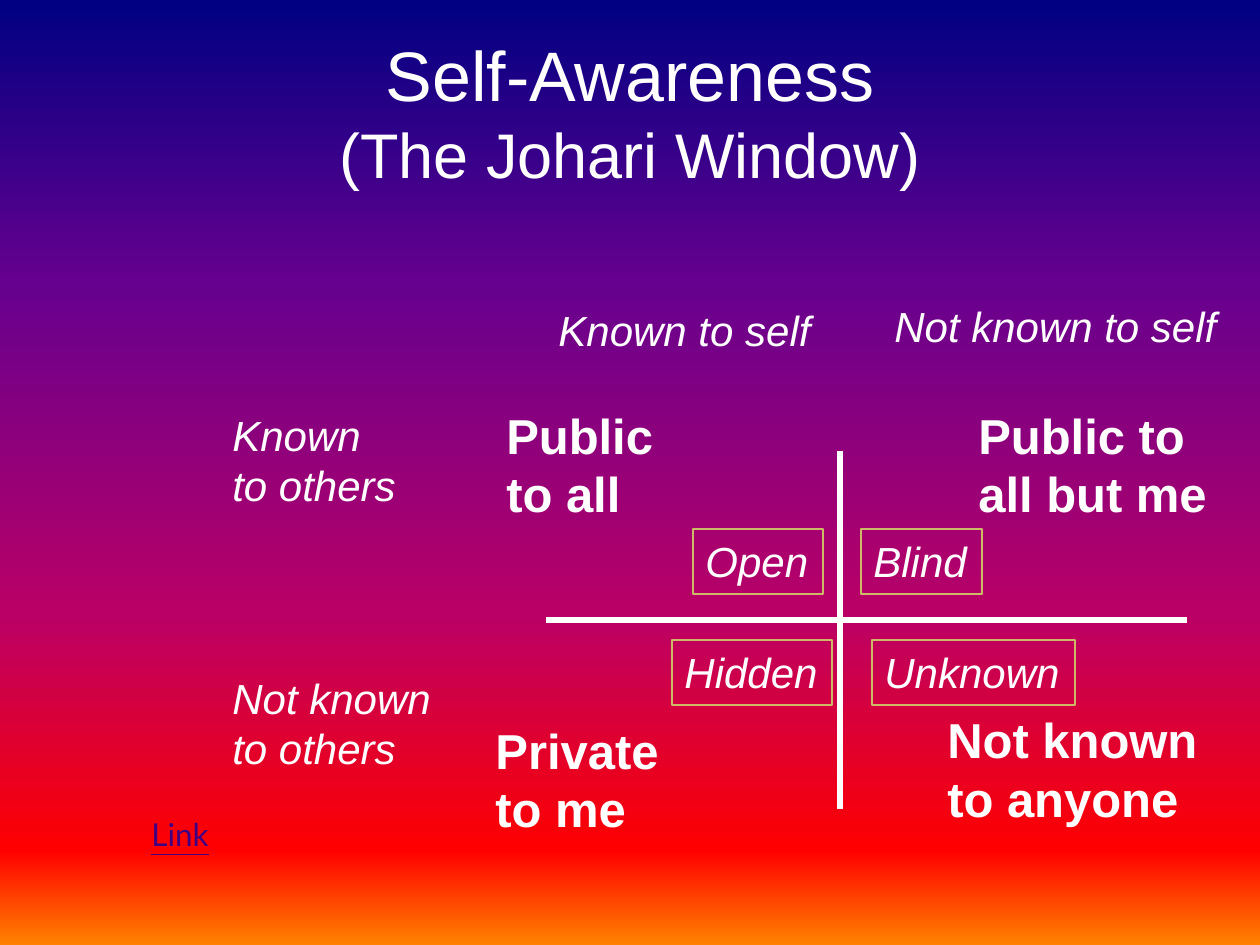
"""Build the Johari Window slide on self-awareness."""
from lxml.etree import SubElement
from pptx import Presentation
from pptx.dml.color import RGBColor
from pptx.enum.shapes import MSO_CONNECTOR as CONNECTOR, MSO_SHAPE as SHAPE
from pptx.enum.text import MSO_ANCHOR as ANCHOR, MSO_AUTO_SIZE as FIT, PP_ALIGN as ALIGN
from pptx.oxml.ns import qn
from pptx.util import Pt

WHITE = RGBColor(0xFF, 0xFF, 0xFF)
GOLD = RGBColor(0xCE, 0xB9, 0x66)
INDIGO = RGBColor(0x41, 0x00, 0x82)
SUNSET = [
    (0, RGBColor(0x00, 0x00, 0x82)),
    (30, RGBColor(0x66, 0x00, 0x8F)),
    (65, RGBColor(0xBA, 0x00, 0x66)),
    (90, RGBColor(0xFF, 0x00, 0x00)),
    (100, RGBColor(0xFF, 0x82, 0x00)),
]
SCALE = 914400 / 126


def px(*lengths):
    return [round(length * SCALE) for length in lengths]


def write(para, text, size, color=WHITE, name="Arial", bold=False, italic=False):
    span = para.add_run()
    span.text = text
    font = span.font
    font.size, font.name = Pt(size), name
    font.bold, font.italic = bold, italic
    font.color.rgb = color
    return span


deck = Presentation()
deck.slide_width, deck.slide_height = px(1260, 945)
page = deck.slides.add_slide(deck.slide_layouts[6])

backdrop = page.background.fill
backdrop.gradient()
backdrop.gradient_angle = 270
stops = page._element.xpath(".//a:gsLst")[0]
for stop in list(stops):
    stops.remove(stop)
for percent, color in SUNSET:
    stop = SubElement(stops, qn("a:gs"), pos=str(percent * 1000))
    SubElement(stop, qn("a:srgbClr"), val=str(color))

title = page.shapes.add_textbox(*px(84, 31, 1092, 160)).text_frame
title.word_wrap = True
title.vertical_anchor = ANCHOR.MIDDLE
para = title.paragraphs[0]
para.alignment = ALIGN.CENTER
write(para, "Self-Awareness", 40)
para.add_line_break()
write(para, "(The Johari Window)", 36)

AXIS_LABELS = [
    ("Known to self", 546, 298, 286, 63),
    ("Not known to self", 882, 294, 378, 63),
    ("Known to others", 220, 403, 189, 115),
    ("Not known to others", 220, 666, 262, 115),
]
MEANINGS = [
    ("Not known to anyone", 935, 703, 325, 130),
    ("Public to all", 494, 399, 199, 130),
    ("Public to all but me", 966, 399, 273, 130),
    ("Private to me", 483, 714, 231, 130),
]
for labels, size, bold in ((AXIS_LABELS, 24, False), (MEANINGS, 28, True)):
    for text, *place in labels:
        frame = page.shapes.add_textbox(*px(*place)).text_frame
        frame.word_wrap = True
        write(frame.paragraphs[0], text, size, bold=bold, italic=not bold)

for ends in ((840, 451, 840, 809), (1187, 620, 546, 620)):
    axis = page.shapes.add_connector(CONNECTOR.STRAIGHT, *px(*ends))
    axis.line.color.rgb = WHITE
    axis.line.width = Pt(3)
    SubElement(axis._element.spPr, qn("a:effectLst"))

PANES = [
    ("Open", 693, 529, 130),
    ("Unknown", 872, 640, 203),
    ("Hidden", 672, 640, 160),
    ("Blind", 861, 529, 121),
]
for text, left, top, width in PANES:
    pane = page.shapes.add_shape(SHAPE.RECTANGLE, *px(left, top, width, 65))
    pane.shadow.inherit = False
    pane.fill.background()
    pane.line.color.rgb = GOLD
    pane.line.width = Pt(1)
    frame = pane.text_frame
    frame.word_wrap = False
    frame.vertical_anchor = ANCHOR.TOP
    para = frame.paragraphs[0]
    para.alignment = ALIGN.LEFT
    write(para, text, 24, italic=True)

link = page.shapes.add_textbox(*px(139, 809, 84, 50)).text_frame
link.word_wrap = False
link.auto_size = FIT.SHAPE_TO_FIT_TEXT
write(link.paragraphs[0], "Link", 18, INDIGO, "Lato").font.underline = True

deck.save("out.pptx")
